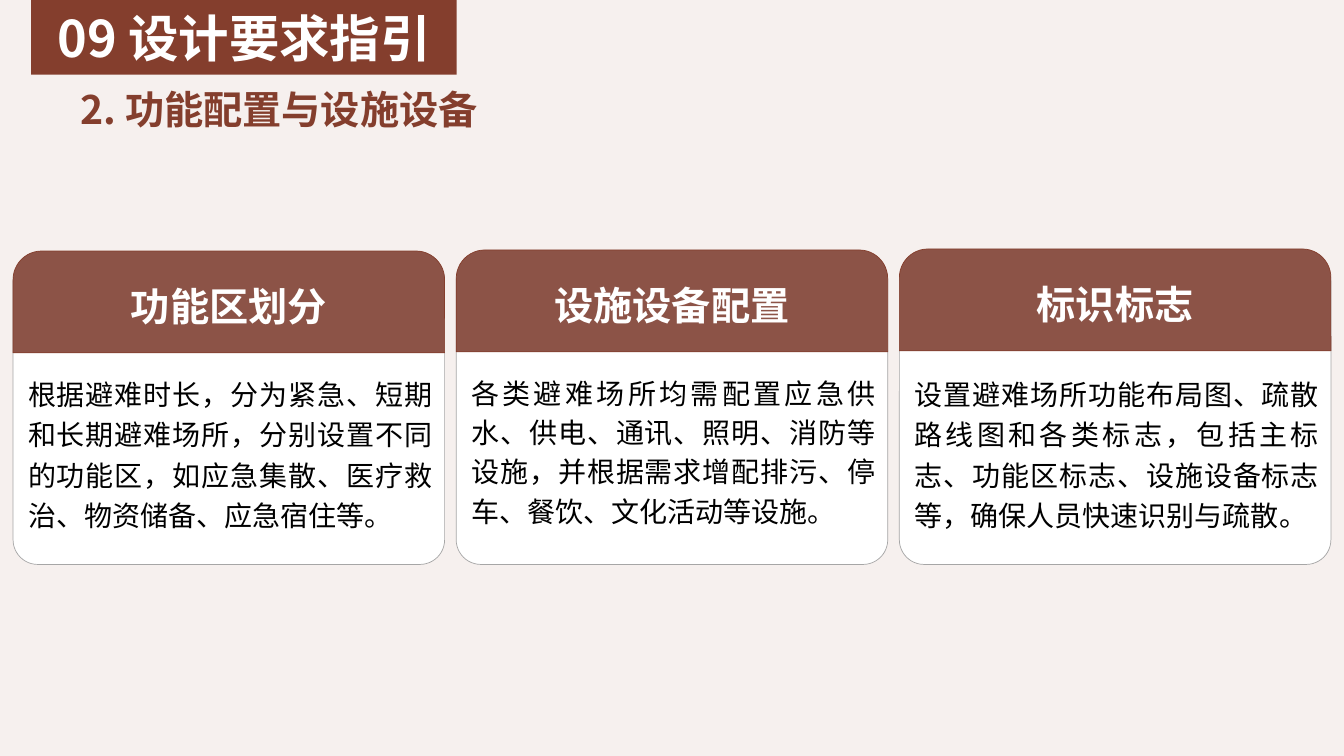
"""Build the slide on functions, facilities and equipment as three cards."""
from lxml.etree import SubElement
from pptx import Presentation
from pptx.dml.color import RGBColor as RGB
from pptx.enum.shapes import MSO_SHAPE as Kind
from pptx.enum.text import MSO_ANCHOR as Anchor, MSO_AUTO_SIZE as Auto, PP_ALIGN as Align
from pptx.oxml.ns import qn
from pptx.util import Inches, Pt

TITLE = "09 设计要求指引"
TOPIC = "2. 功能配置与设施设备"
CARDS = [
    ("功能区划分", 2.49, 1.2,
     "根据避难时长，分为紧急、短期和长期避难场所，分别设置不同的功能区，"
     "如应急集散、医疗救治、物资储备、应急宿住等。"),
    ("设施设备配置", 2.48, Pt(28),
     "各类避难场所均需配置应急供水、供电、通讯、照明、消防等设施，"
     "并根据需求增配排污、停车、餐饮、文化活动等设施。"),
    ("标识标志", 2.47, 1.2,
     "设置避难场所功能布局图、疏散路线图和各类标志，"
     "包括主标志、功能区标志、设施设备标志等，确保人员快速识别与疏散。"),
]
COLORS = {"back": "F6F0EE", "brand": "843E2D", "head": "8C5347",
          "white": "FFFFFF", "edge": "A6A6A6", "text": "000000"}
FONT = "Noto Sans CJK SC"
PAGE = (13.33, 7.5)
LEFT, RIGHT, WIDE = 0.13, 13.2, 4.28
STEP = (RIGHT - WIDE - LEFT) / (len(CARDS) - 1)


def tint(name):
    return RGB.from_string(COLORS[name])


def box(pos):
    return [Inches(n) for n in pos]


def write(shape, text, size, color, bold=True, align=Align.CENTER, anchor=Anchor.MIDDLE):
    frame = shape.text_frame
    frame.word_wrap = True
    frame.auto_size = Auto.NONE
    frame.vertical_anchor = anchor
    para = frame.paragraphs[0]
    para.text = text
    para.alignment = align
    font = para.font
    font.size, font.bold, font.name = Pt(size), bold, FONT
    font.color.rgb = tint(color)
    props = para._p.pPr
    props.set("hangingPunct", "0")
    SubElement(props.find(qn("a:defRPr")), qn("a:ea")).set("typeface", FONT)
    return para


def panel(shapes, kind, pos, fill, line=None, bends=()):
    shape = shapes.add_shape(kind, *box(pos))
    shape.shadow.inherit = False
    shape.fill.solid()
    shape.fill.fore_color.rgb = tint(fill)
    if line:
        shape.line.color.rgb = tint(line)
        shape.line.width = Pt(0.5)
    else:
        shape.line.fill.background()
    for i, bend in enumerate(bends):
        shape.adjustments[i] = bend
    return shape


def main():
    deck = Presentation()
    deck.slide_width, deck.slide_height = box(PAGE)
    slide = deck.slides.add_slide(deck.slide_layouts[5])
    shapes = slide.shapes

    title = shapes.title
    back = panel(shapes, Kind.RECTANGLE, (0, 0, *PAGE), "back")
    title._element.addprevious(back._element)
    title.left, title.top, title.width, title.height = box((0.31, 0, 4.22, 0.74))
    title.fill.solid()
    title.fill.fore_color.rgb = tint("brand")
    write(title, TITLE, 36, "white")

    topic = shapes.add_textbox(*box((0.31, 0.87, 5.01, 0.49)))
    para = write(topic, TOPIC, 28, "brand", align=Align.JUSTIFY, anchor=Anchor.TOP)
    para.line_spacing = Pt(28)
    para._p.pPr.set("indent", str(Inches(0.39)))

    for i, (name, top, pitch, text) in enumerate(CARDS):
        x = LEFT + i * STEP
        panel(shapes, Kind.ROUNDED_RECTANGLE, (x, 2.54, WIDE, 3.06), "white", "edge", [0.08])
        head = panel(shapes, Kind.ROUND_2_SAME_RECTANGLE, (x, top, WIDE, 1.01),
                     "head", "brand", [0.28, 0])
        write(head, name, 28, "white")
        body = shapes.add_textbox(*box((x + 0.05, 3.63, 4.21, 1.68)))
        para = write(body, text, 20, "text", False, Align.JUSTIFY, Anchor.TOP)
        para.line_spacing = pitch

    deck.save("out.pptx")


if __name__ == "__main__":
    main()
